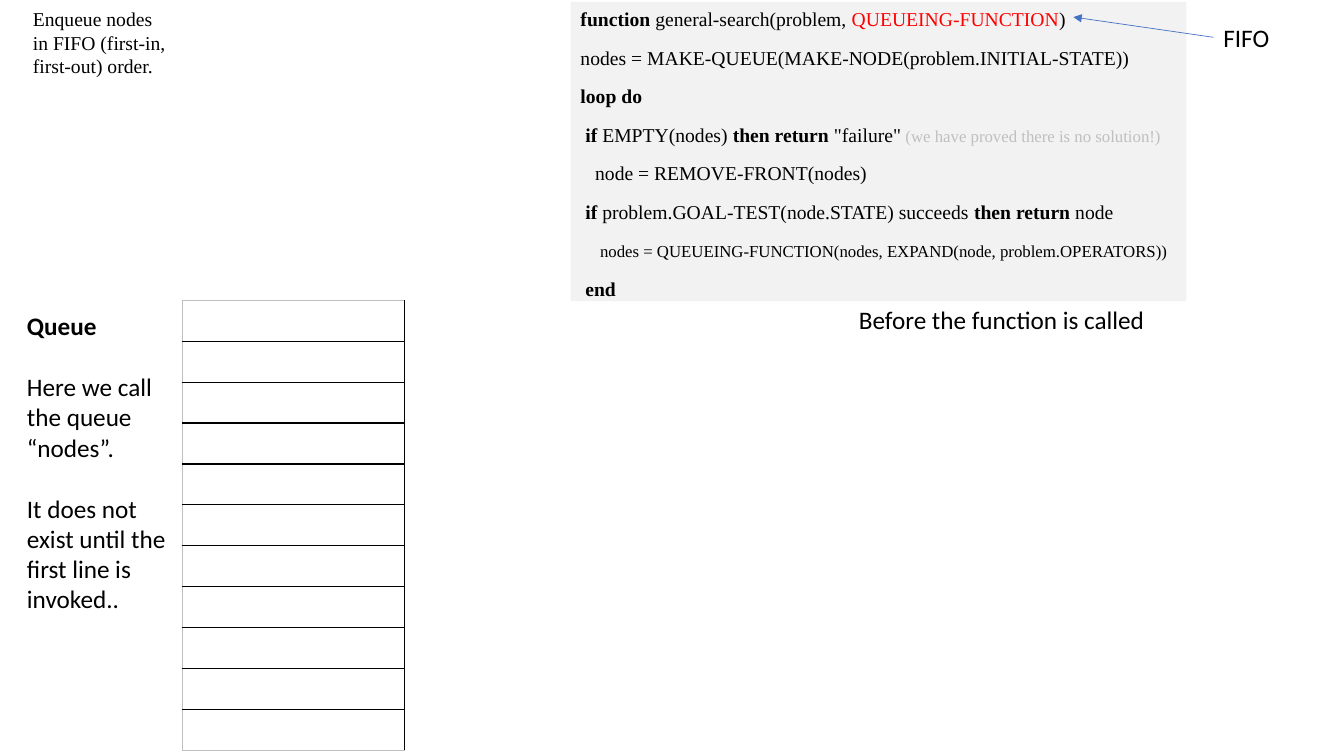
from lxml import etree
from pptx import Presentation
from pptx.dml.color import RGBColor
from pptx.enum.shapes import MSO_CONNECTOR as CONN, MSO_SHAPE as SHAPE
from pptx.enum.text import MSO_ANCHOR as ANCHOR, PP_ALIGN as ALIGN
from pptx.oxml.ns import qn
from pptx.util import Cm, Pt

BLACK, RED, GRAY, PANEL, BLUE = "000000", "FF0000", "BFBFBF", "F2F2F2", "4472C4"
SERIF, SANS = "Times New Roman", "Calibri"
ROWS = 11
CODE = [
    (0, [("function", "b"), (" general-search(problem, ", ""),
         ("QUEUEING-FUNCTION", "red"), (")", "")]),
    (0, [("nodes = MAKE-QUEUE(MAKE-NODE(problem.INITIAL-STATE))", "")]),
    (0, [("loop do", "b")]),
    (1, [("if", "b"), (" EMPTY(nodes) ", ""), ("then return", "b"),
         (' "failure"', ""), (" (we have proved there is no solution!)", "note")]),
    (3, [("node = REMOVE-FRONT(nodes)", "")]),
    (1, [("if ", "b"), ("problem.GOAL-TEST(node.STATE) succeeds ", ""),
         ("then return", "b"), (" node", "")]),
    (4, [("nodes = QUEUEING-FUNCTION(nodes, EXPAND(node, problem.OPERATORS))", "small"),
         (" ", "")]),
    (1, [("end", "b")]),
]
STYLES = {
    "": (14, BLACK, False),
    "b": (14, BLACK, True),
    "red": (14, RED, False),
    "note": (12, GRAY, False),
    "small": (12, BLACK, False),
}


def rgb(value):
    """Turn a hex string into a colour."""
    return RGBColor.from_string(value)


def style_run(r, size, font, color=BLACK, bold=False):
    """Set the font of a run."""
    r.font.size, r.font.name, r.font.bold = Pt(size), font, bold
    r.font.color.rgb = rgb(color)


def add_text(s, box, lines, size, font, gap=0, bold_first=False):
    """Place a wrapped text box with one paragraph per line."""
    tf = s.shapes.add_textbox(*map(Cm, box)).text_frame
    tf.word_wrap = True
    tf.text = "\n".join(lines)
    for i, p in enumerate(tf.paragraphs):
        p.space_before = Pt(gap if i else 0)
        style_run(p.runs[0], size, font, bold=bold_first and i == 0)


def add_code(s, box):
    """Draw the pseudocode panel."""
    sp = s.shapes.add_shape(SHAPE.RECTANGLE, *map(Cm, box))
    sp.shadow.inherit = False
    sp.fill.solid()
    sp.fill.fore_color.rgb = rgb(PANEL)
    sp.line.fill.background()
    tf = sp.text_frame
    tf.word_wrap, tf.vertical_anchor = True, ANCHOR.TOP
    for i, (indent, parts) in enumerate(CODE):
        p = tf.add_paragraph() if i else tf.paragraphs[0]
        p.alignment = ALIGN.LEFT
        p.space_before = p.space_after = Pt(5.35)
        p._p.get_or_add_pPr().set("marL", str(Cm(0.123 * indent)))
        for text, style in parts:
            r = p.add_run()
            r.text = text
            size, color, bold = STYLES[style]
            style_run(r, size, SERIF, color, bold)


def set_borders(cell, **edges):
    """Give each edge of a cell a (colour, points) line, or none."""
    tcPr = cell._tc.get_or_add_tcPr()
    for i, side in enumerate("LRTB"):
        ln = etree.Element(qn(f"a:ln{side}"))
        if side in edges:
            color, width = edges[side]
            ln.set("w", str(Pt(width)))
            fill = etree.SubElement(ln, qn("a:solidFill"))
            etree.SubElement(fill, qn("a:srgbClr"), val=color)
        else:
            ln.set("w", "0")
            etree.SubElement(ln, qn("a:noFill"))
        tcPr.insert(i, ln)


def add_queue(s, box, slot_width):
    """Draw the queue slots with the call stage beside them."""
    x, y, w, h = map(Cm, box)
    table = s.shapes.add_table(ROWS, 2, x, y, w, h).table
    table.first_row = table.horz_banding = False
    table.columns[0].width = Cm(slot_width)
    table.columns[1].width = w - Cm(slot_width)
    strong, faint = (BLACK, 1), (GRAY, 0.5)
    for i, row in enumerate(table.rows):
        row.height = h // ROWS
        slot, stage = row.cells
        for cell in row.cells:
            cell.fill.background()
            cell.text_frame.paragraphs[0].font.size = Pt(18)
        set_borders(slot, L=faint, R=strong, T=strong if i else faint,
                    B=strong if i < ROWS - 1 else faint)
        set_borders(stage, L=strong)
    p = table.cell(0, 1).text_frame.paragraphs[0]
    p.text = "Before the function is called"
    p.alignment = ALIGN.RIGHT
    style_run(p.runs[0], 18, SANS)


def add_fifo(s, box, tip):
    """Label the queueing function and point an arrow at it."""
    x, y, w, h = box
    add_text(s, box, ["FIFO"], 18, SANS)
    arrow = s.shapes.add_connector(CONN.STRAIGHT, Cm(x), Cm(y + h / 2), *map(Cm, tip))
    arrow.line.color.rgb = rgb(BLUE)
    arrow.line.width = Pt(0.5)
    etree.SubElement(arrow.line._get_or_add_ln(), qn("a:tailEnd"), type="triangle")
    etree.SubElement(arrow._element.spPr, qn("a:effectLst"))


def main():
    """Build and save the slide."""
    prs = Presentation()
    prs.slide_width, prs.slide_height = Cm(33.87), Cm(19.05)
    s = prs.slides.add_slide(prs.slide_layouts[6])
    add_code(s, (14.38, 0.05, 15.52, 7.54))
    add_queue(s, (4.6, 7.57, 24.49, 11.18), 5.6)
    add_text(s, (0.43, 7.7, 4.17, 7.95),
             ["Queue", "Here we call the queue “nodes”.",
              "It does not exist until the first line is invoked.."],
             18, SANS, gap=22, bold_first=True)
    add_fifo(s, (30.58, 0.43, 1.8, 1.02), (27.05, 0.43))
    add_text(s, (0.58, 0.05, 4.02, 2.06),
             ["Enqueue nodes in FIFO (first-in, first-out) order."], 14, SERIF)
    prs.save("out.pptx")


if __name__ == "__main__":
    main()
